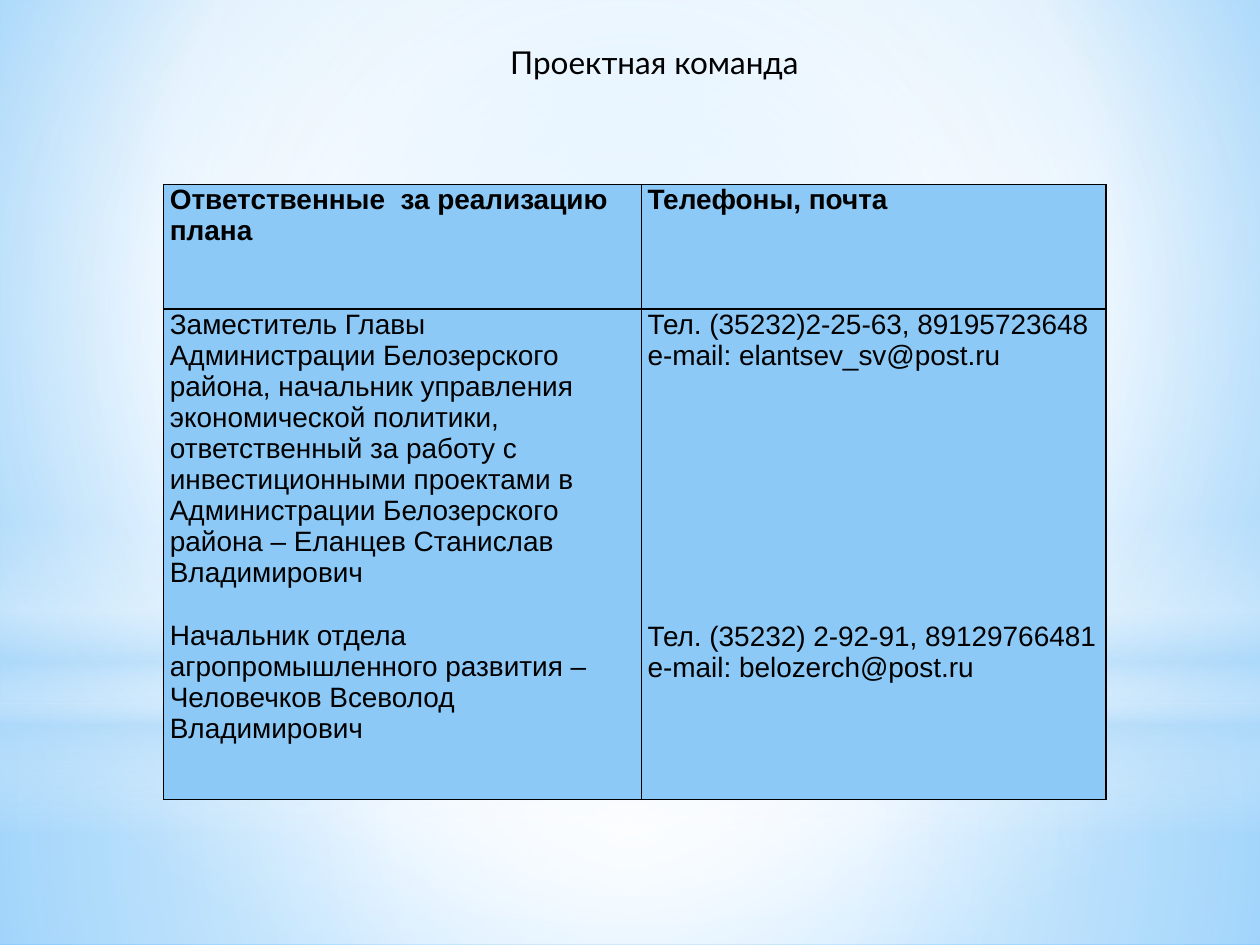
from lxml.etree import SubElement
from pptx import Presentation
from pptx.dml.color import RGBColor
from pptx.enum.shapes import MSO_SHAPE
from pptx.enum.text import MSO_ANCHOR, PP_ALIGN
from pptx.oxml import parse_xml
from pptx.oxml.ns import nsdecls, qn
from pptx.util import Pt

COLORS = {
    "text": "000000",
    "border": "000000",
    "cell": "8CC9F7",
    "white": "FFFFFF",
    "haze": "B4DCFA",
    "sky": "9ED5FF",
    "deep_sky": "5BB9FF",
}
WIDTH, HEIGHT = 720, 540
HORIZON = 402
CENTER = (50, 50, 50, 50)

# Each paragraph is its text and the space before it in points.
TEAM_ROWS = [
    [
        [("Ответственные  за реализацию плана", 0)],
        [("Телефоны, почта", 0)],
    ],
    [
        [
            ("Заместитель Главы Администрации Белозерского района, начальник "
             "управления экономической политики, ответственный за работу с "
             "инвестиционными проектами в Администрации Белозерского района – "
             "Еланцев Станислав Владимирович", 0),
            ("Начальник отдела агропромышленного развития – "
             "Человечков Всеволод Владимирович", 18),
        ],
        [
            ("Тел. (35232)2-25-63, 89195723648", 0),
            ("e-mail: elantsev_sv@post.ru", 0),
            ("Тел. (35232) 2-92-91, 89129766481", 143),
            ("e-mail: belozerch@post.ru", 0),
        ],
    ],
]


def gradient(stops, focus=None):
    """Return a gradFill: circular around focus, or top to bottom without one."""
    stop_xml = "".join(
        f'<a:gs pos="{position * 1000}"><a:srgbClr val="{COLORS[color]}">'
        f'<a:alpha val="{opacity * 1000}"/></a:srgbClr></a:gs>'
        for position, color, opacity in stops
    )
    if focus:
        sides = " ".join(f'{side}="{value * 1000}"' for side, value in zip("ltrb", focus))
        direction = f'<a:path path="circle"><a:fillToRect {sides}/></a:path>'
    else:
        direction = '<a:lin ang="5400000" scaled="0"/>'
    return parse_xml(
        f'<a:gradFill {nsdecls("a")} rotWithShape="1">'
        f"<a:gsLst>{stop_xml}</a:gsLst>{direction}</a:gradFill>"
    )


def replace_solid_fill(properties, new_fill):
    properties.replace(properties.find(qn("a:solidFill")), new_fill)


def add_glow(slide, kind, box, stops, focus=None):
    shape = slide.shapes.add_shape(kind, *map(Pt, box))
    shape.shadow.inherit = False
    shape.line.fill.background()
    shape.fill.solid()
    replace_solid_fill(shape.element.spPr, gradient(stops, focus))


def add_backdrop(slide, width, height):
    slide.background.fill.solid()
    sky = [(0, "sky", 100), (60, "white", 100), (100, "deep_sky", 100)]
    replace_solid_fill(slide.element.find(".//" + qn("p:bgPr")), gradient(sky, (20, 10, 20, 60)))
    rectangle, oval = MSO_SHAPE.RECTANGLE, MSO_SHAPE.OVAL
    add_glow(slide, rectangle, (0, HORIZON, width, height - HORIZON),
             [(0, "white", 91), (37, "white", 76), (100, "haze", 79)], CENTER)
    add_glow(slide, rectangle, (0, 0, width, HORIZON),
             [(0, "white", 89), (48, "white", 62), (100, "haze", 79)], CENTER)
    add_glow(slide, rectangle, (0, 297, width, 180),
             [(0, "white", 0), (29, "white", 30), (45, "haze", 40),
              (55, "white", 26), (65, "haze", 60), (100, "white", 0)])
    add_glow(slide, oval, (0, 126, width, HORIZON),
             [(0, "white", 100), (56, "white", 0)], CENTER)


def add_run(paragraph, text, font_name, size, bold=False):
    run = paragraph.add_run()
    run.text = text
    run.font.name = font_name
    run.font.size = Pt(size)
    run.font.bold = bold
    run.font.color.rgb = RGBColor.from_string(COLORS["text"])


def place_title(slide, text, left, top, width, height):
    title = slide.shapes.title
    title.left, title.top, title.width, title.height = map(Pt, (left, top, width, height))
    # Bring the title in front of the backdrop.
    title.element.getparent().append(title.element)
    title.text_frame.vertical_anchor = MSO_ANCHOR.MIDDLE
    paragraph = title.text_frame.paragraphs[0]
    paragraph.alignment = PP_ALIGN.CENTER
    add_run(paragraph, text, "Lato", 18)


def add_borders(cell):
    properties = cell._tc.get_or_add_tcPr()
    for side in ("a:lnL", "a:lnR", "a:lnT", "a:lnB"):
        line = SubElement(properties, qn(side), w=str(Pt(1)))
        fill = SubElement(line, qn("a:solidFill"))
        SubElement(fill, qn("a:srgbClr"), val=COLORS["border"])


def fill_cell(cell, paragraphs, bold):
    add_borders(cell)
    cell.fill.solid()
    cell.fill.fore_color.rgb = RGBColor.from_string(COLORS["cell"])
    cell.margin_left = cell.margin_right = Pt(3.6)
    cell.margin_top = cell.margin_bottom = 0
    frame = cell.text_frame
    for index, (text, space_before) in enumerate(paragraphs):
        paragraph = frame.add_paragraph() if index else frame.paragraphs[0]
        paragraph.space_before = Pt(space_before)
        add_run(paragraph, text, "Arial", 16, bold)


def add_team_table(slide, left, top, column_widths, row_heights):
    table = slide.shapes.add_table(
        len(row_heights), len(column_widths), Pt(left), Pt(top),
        Pt(sum(column_widths)), Pt(sum(row_heights)),
    ).table
    table.first_row = table.horz_banding = False
    for column, width in zip(table.columns, column_widths):
        column.width = Pt(width)
    for row_index, (row, height) in enumerate(zip(table.rows, row_heights)):
        row.height = Pt(height)
        for cell, paragraphs in zip(row.cells, TEAM_ROWS[row_index]):
            fill_cell(cell, paragraphs, bold=row_index == 0)


def main():
    presentation = Presentation()
    presentation.slide_width, presentation.slide_height = Pt(WIDTH), Pt(HEIGHT)
    slide = presentation.slides.add_slide(presentation.slide_layouts[5])
    add_backdrop(slide, WIDTH, HEIGHT)
    place_title(slide, "Проектная команда", 82, 21, 584, 29)
    add_team_table(slide, 93.5, 105.5, (273, 265.5), (71, 280.5))
    presentation.save("out.pptx")


if __name__ == "__main__":
    main()
